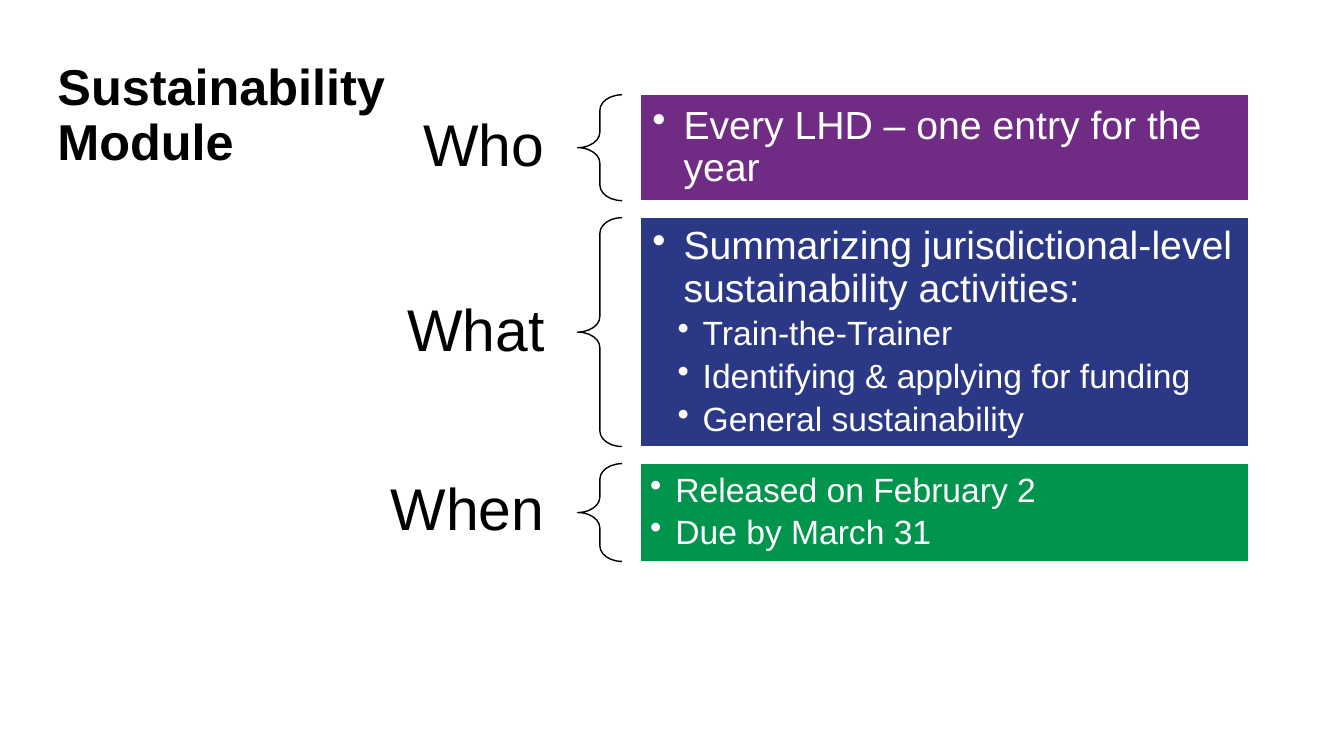
import pptx
import pptx.dml.color
import pptx.enum.shapes
import pptx.enum.text
import pptx.util
from lxml import etree

RGBColor = pptx.dml.color.RGBColor
MSO_SHAPE = pptx.enum.shapes.MSO_SHAPE
ANCHOR = pptx.enum.text.MSO_ANCHOR
ALIGN = pptx.enum.text.PP_ALIGN
Pt = pptx.util.Pt

BLACK = RGBColor(0x00, 0x00, 0x00)
WHITE = RGBColor(0xFF, 0xFF, 0xFF)
PURPLE = RGBColor(0x70, 0x2B, 0x84)
NAVY = RGBColor(0x2B, 0x38, 0x85)
GREEN = RGBColor(0x00, 0x94, 0x4D)

PX = 9144  # 100 px to the inch


def set_all(target, values):
    for key, value in values.items():
        setattr(target, key, value)


class SlideBuilder:
    font_name = "Arial"
    line_spacing = 0.9

    def __init__(self, slide):
        self.slide = slide

    def box(self, left, top, width, height):
        return [value * PX for value in (left, top, width, height)]

    def frame(self, text_frame, anchor, side, end):
        set_all(text_frame, dict(
            word_wrap=True, vertical_anchor=anchor,
            auto_size=pptx.enum.text.MSO_AUTO_SIZE.NONE,
            margin_left=side * PX, margin_right=side * PX,
            margin_top=end * PX, margin_bottom=end * PX))

    def add_text(self, paragraph, text, size, color, align=ALIGN.LEFT, bold=False):
        set_all(paragraph, dict(alignment=align, line_spacing=self.line_spacing))
        run = paragraph.add_run()
        run.text = text
        set_all(run.font, dict(name=self.font_name, size=Pt(size), bold=bold))
        run.font.color.rgb = color

    def title(self, text, place):
        title = self.slide.shapes.title
        set_all(title, dict(zip(("left", "top", "width", "height"), self.box(*place))))
        self.frame(title.text_frame, ANCHOR.BOTTOM, 10, 5)
        self.add_text(title.text_frame.paragraphs[0], text, 36, BLACK, bold=True)

    def label(self, text, place):
        frame = self.slide.shapes.add_textbox(*self.box(*place)).text_frame
        self.frame(frame, ANCHOR.MIDDLE, 33, 12)
        self.add_text(frame.paragraphs[0], text, 42, BLACK, ALIGN.RIGHT)

    def shape(self, kind, place, line_color):
        shape = self.slide.shapes.add_shape(kind, *self.box(*place))
        shape.shadow.inherit = False
        shape.line.color.rgb = line_color
        shape.line.width = Pt(1)
        return shape

    def brace(self, place):
        brace = self.shape(MSO_SHAPE.LEFT_BRACE, place, BLACK)
        brace.fill.background()
        brace.adjustments[0] = 0.35

    def panel(self, place, color, inset, bullets):
        panel = self.shape(MSO_SHAPE.RECTANGLE, place, WHITE)
        panel.fill.solid()
        panel.fill.fore_color.rgb = color
        frame = panel.text_frame
        self.frame(frame, ANCHOR.MIDDLE, inset, inset)
        for index, (text, size, indent, hang) in enumerate(bullets):
            paragraph = frame.add_paragraph() if index else frame.paragraphs[0]
            self.bullet(paragraph, indent, hang)
            self.add_text(paragraph, text, size, WHITE)
            if index:
                paragraph.space_before = Pt(4.5)

    def bullet(self, paragraph, indent, hang):
        properties = paragraph._p.get_or_add_pPr()
        properties.set("marL", str(indent * PX))
        properties.set("indent", str(-hang * PX))
        mark = etree.SubElement(properties, pptx.oxml.ns.qn("a:buChar"))
        mark.set("char", "•")


# Each row: label, label top, panel top, height, colour, inset, bullets
# Each bullet: text, size, indent, hang
ROWS = [
    ("Who", 101, 94, 105, PURPLE, 12,
     [("Every LHD – one entry for the year", 28, 31, 31)]),
    ("What", 284, 216, 227, NAVY, 12,
     [("Summarizing jurisdictional-level sustainability activities:", 28, 31, 31),
      ("Train-the-Trainer", 24, 50, 25),
      ("Identifying & applying for funding", 24, 50, 25),
      ("General sustainability", 24, 50, 25)]),
    ("When", 462, 460, 97, GREEN, 10,
     [("Released on February 2", 24, 25, 25),
      ("Due by March 31", 24, 25, 25)]),
]


def main():
    deck = pptx.Presentation()
    set_all(deck, dict(slide_width=1333 * PX, slide_height=750 * PX))
    builder = SlideBuilder(deck.slides.add_slide(deck.slide_layouts[5]))

    # Heading
    builder.title("Sustainability Module", (47, 0, 387, 175))

    # Question, brace and answer panel in each row
    for question, label_top, top, height, color, inset, answers in ROWS:
        builder.label(question, (351, label_top, 222, 91))
        builder.brace((573, top, 44, height))
        builder.panel((635, top, 604, height), color, inset, answers)

    deck.save("out.pptx")


if __name__ == "__main__":
    main()
